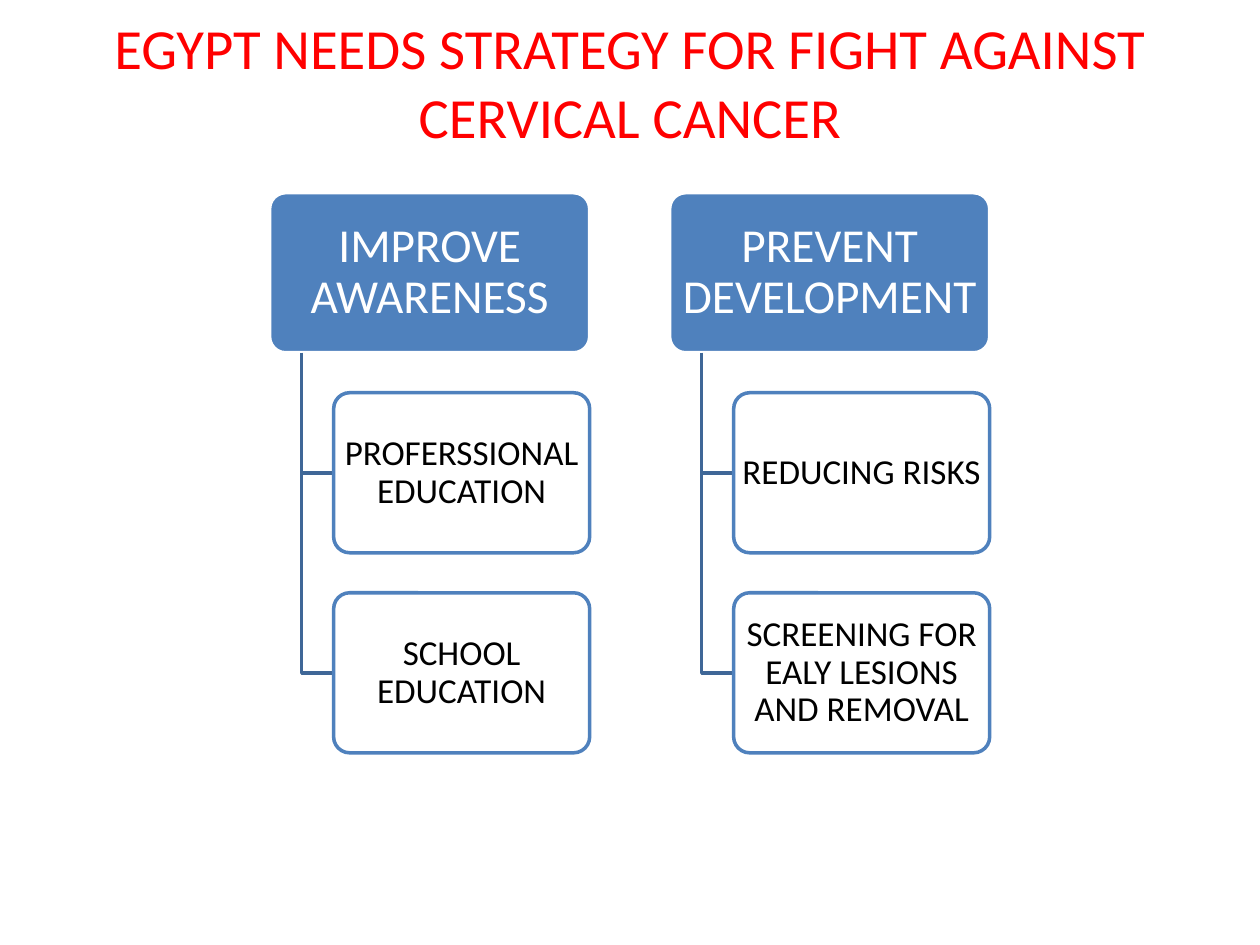
import pptx
import pptx.util
import pptx.dml.color
import pptx.enum.shapes
import pptx.enum.text
from dataclasses import dataclass
from lxml import etree
from pptx.oxml.ns import qn

Inches = pptx.util.Inches
Pt = pptx.util.Pt


@dataclass(frozen=True)
class Theme:
    font: str = "Calibri"
    title: str = "FF0000"
    accent: str = "4F81BD"
    branch: str = "3F6797"
    light: str = "FFFFFF"
    dark: str = "000000"
    title_size: float = 32.4
    head_size: float = 27
    item_size: float = 20
    line_width: float = 2


def rgb(value):
    return pptx.dml.color.RGBColor.from_string(value)


class SlideBuilder:
    def __init__(self, slide, theme):
        self.s = slide
        self.theme = theme

    def set_text(self, shape, text, size, color, inset, spacing=None):
        tf = shape.text_frame
        tf.word_wrap = True
        tf.vertical_anchor = pptx.enum.text.MSO_ANCHOR.MIDDLE
        tf.margin_left = tf.margin_right = Inches(inset)
        tf.margin_top = tf.margin_bottom = Inches(inset / 2)
        p = tf.paragraphs[0]
        p.text = text
        p.alignment = pptx.enum.text.PP_ALIGN.CENTER
        p.line_spacing = spacing
        p.font.name = self.theme.font
        p.font.size = Pt(size)
        p.font.color.rgb = rgb(color)

    def outline(self, shape, color):
        shape.shadow.inherit = False
        shape.line.color.rgb = rgb(color)
        shape.line.width = Pt(self.theme.line_width)

    def title(self, text, x, y, w, h):
        sp = self.s.shapes.add_textbox(Inches(x), Inches(y), Inches(w), Inches(h))
        self.set_text(sp, text, self.theme.title_size, self.theme.title, 0.1)

    def box(self, x, y, w, h, fill, line):
        sp = self.s.shapes.add_shape(
            pptx.enum.shapes.MSO_SHAPE.ROUNDED_RECTANGLE,
            Inches(x), Inches(y), Inches(w), Inches(h))
        sp.adjustments[0] = 0.1
        sp.fill.solid()
        sp.fill.fore_color.rgb = rgb(fill)
        self.outline(sp, line)
        return sp

    def head(self, text, x, y, w, h):
        t = self.theme
        sp = self.box(x, y, w, h, t.accent, t.light)
        self.set_text(sp, text, t.head_size, t.light, 0.02, 0.9)

    def item(self, text, x, y, w, h):
        t = self.theme
        sp = self.box(x, y, w, h, t.light, t.accent)
        color = sp.element.spPr.find(qn("a:solidFill"))[0]
        etree.SubElement(color, qn("a:alpha")).set("val", "90000")
        self.set_text(sp, text, t.item_size, t.dark, 0, 0.9)

    def branch(self, x, top, bottom, right):
        fb = self.s.shapes.build_freeform(Inches(x), Inches(top))
        fb.add_line_segments(
            [(Inches(x), Inches(bottom)), (Inches(right), Inches(bottom))], close=False)
        sp = fb.convert_to_shape()
        sp.fill.background()
        self.outline(sp, self.theme.branch)


COLUMNS = [
    ("IMPROVE AWARENESS", ["PROFERSSIONAL EDUCATION", "SCHOOL EDUCATION"]),
    ("PREVENT DEVELOPMENT", ["REDUCING RISKS", "SCREENING FOR EALY LESIONS AND REMOVAL"]),
]
LEFT, TOP = 2.14, 1.53
HEAD_W, BOX_H = 2.54, 1.27
INDENT = HEAD_W / 5          # items start one fifth into the head
COL_STEP = HEAD_W * 1.25     # gaps are a quarter of a box
ROW_STEP = BOX_H * 1.25


def main():
    prs = pptx.Presentation()
    prs.slide_width, prs.slide_height = Inches(10), Inches(7.5)
    builder = SlideBuilder(prs.slides.add_slide(prs.slide_layouts[6]), Theme())

    # Title
    builder.title("EGYPT NEEDS STRATEGY FOR FIGHT AGAINST CERVICAL CANCER", 0.5, 0.02, 9, 1.25)

    # Two hierarchies: a head with items hanging below it
    for col, (head, items) in enumerate(COLUMNS):
        x = LEFT + col * COL_STEP
        builder.head(head, x, TOP, HEAD_W, BOX_H)
        for row, text in enumerate(items, 1):
            y = TOP + row * ROW_STEP
            builder.branch(x + INDENT / 2, TOP + BOX_H, y + BOX_H / 2, x + INDENT)
            builder.item(text, x + INDENT, y, HEAD_W - INDENT, BOX_H)

    prs.save("out.pptx")


if __name__ == "__main__":
    main()
